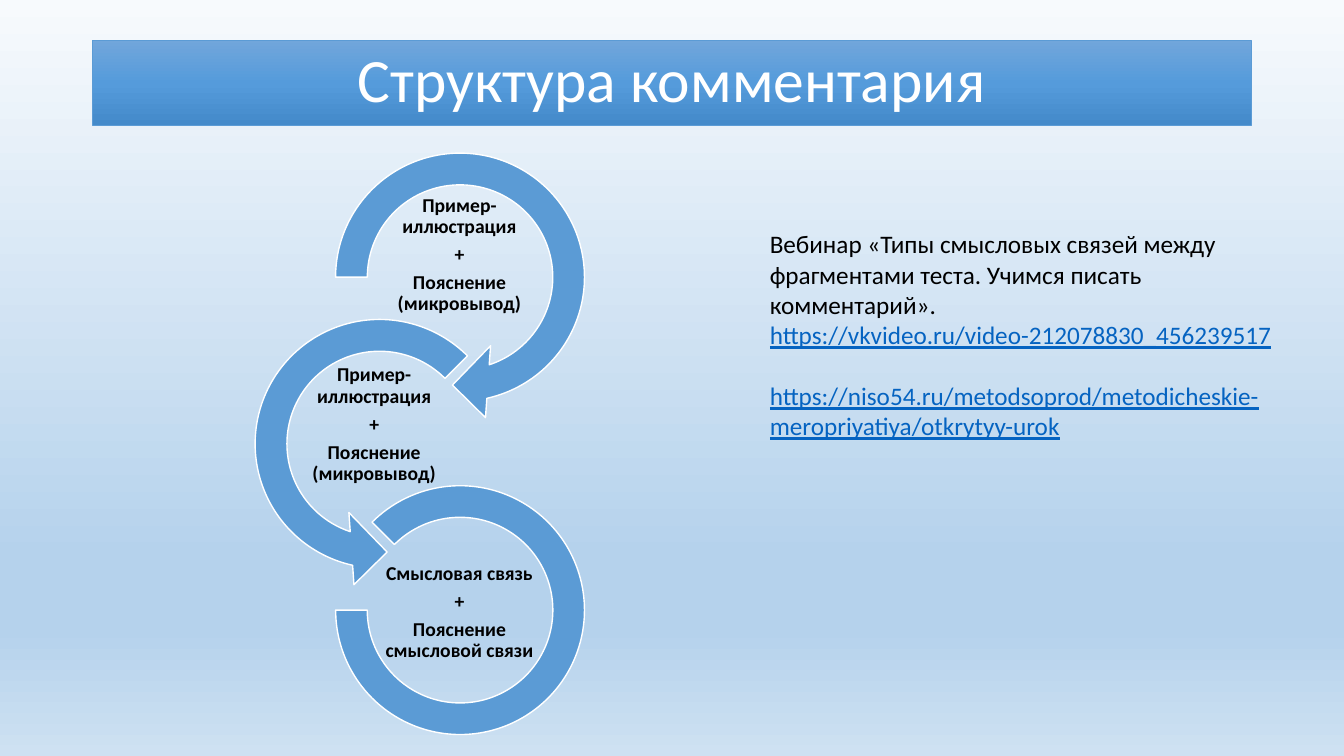
import pptx
import pptx.dml.color
import pptx.enum.shapes
import pptx.enum.text
import pptx.oxml
import pptx.oxml.ns
import pptx.util

Cm = pptx.util.Cm
Pt = pptx.util.Pt
SHAPES = pptx.enum.shapes.MSO_SHAPE
ALIGN = pptx.enum.text.PP_ALIGN
ANCHOR = pptx.enum.text.MSO_ANCHOR

COLOURS = {
    "blue": "5B9BD5",
    "white": "FFFFFF",
    "black": "000000",
    "link": "0563C1",
}
BACKGROUND_STOPS = [(0, "F7FAFD"), (74, "B5D2EC"), (83, "B5D2EC"), (100, "CEE1F2")]
TITLE_STOPS = [(0, "71A6DB"), (50, "559BDB"), (100, "448ACA")]

EXAMPLE = ["Пример-иллюстрация", "+", "Пояснение (микровывод)"]
CONNECTION = ["Смысловая связь", "+", "Пояснение смысловой связи"]
RINGS = [
    (SHAPES.CIRCULAR_ARROW, (7.95, 3.35, 7.29, 7.27), (0.11, 11.423, 45, 108, 0.125),
     (9.55, 5.41, 4.06, 2.03), EXAMPLE),
    (SHAPES.LEFT_CIRCULAR_ARROW, (5.92, 7.54, 7.29, 7.29), (0.11, 11.423, 63, 189, 0.125),
     (7.26, 9.04, 4.34, 3.33), EXAMPLE),
    (SHAPES.BLOCK_ARC, (8.46, 12.24, 6.27, 6.27), (135, 108, 0.127),
     (9.55, 14.43, 4.06, 2.03), CONNECTION),
]
WEBINAR = "Вебинар «Типы смысловых связей между фрагментами теста. Учимся писать комментарий»."
VIDEO_ADDRESS = "https://vkvideo.ru/video-212078830_456239517"
LESSON_ADDRESS = "https://niso54.ru/metodsoprod/metodicheskie-meropriyatiya/otkrytyy-urok"


def colour(name):
    return pptx.dml.color.RGBColor.from_string(COLOURS[name])


def apply(target, values):
    for name, value in values.items():
        setattr(target, name, value)


class SlideBuilder:
    font_name = "Calibri"
    ring_paragraph = {"alignment": ALIGN.CENTER, "line_spacing": 0.9, "space_after": Pt(4.9)}
    ring_font = {"size": Pt(14), "bold": True}
    ring_frame = {"vertical_anchor": ANCHOR.MIDDLE, "margin_left": Cm(0.02),
                  "margin_right": Cm(0.02), "margin_top": Cm(0.02), "margin_bottom": Cm(0.02)}

    def __init__(self, slide):
        self.slide = slide

    def gradient(self, fill, element, stops):
        fill.gradient()
        fill.gradient_angle = 270
        stop_list = element.xpath(".//a:gsLst")[0]
        for stop in list(stop_list):
            stop_list.remove(stop)
        for position, value in stops:
            stop_list.append(pptx.oxml.parse_xml(
                f'<a:gs {pptx.oxml.ns.nsdecls("a")} pos="{position * 1000}">'
                f'<a:srgbClr val="{value}"/></a:gs>'))

    def background(self, stops):
        self.gradient(self.slide.background.fill, self.slide.element, stops)

    def shape(self, kind, box, line_name, line_width):
        shape = self.slide.shapes.add_shape(kind, *map(Cm, box))
        shape.shadow.inherit = False
        shape.line.color.rgb = colour(line_name)
        shape.line.width = Pt(line_width)
        return shape

    def fill_paragraph(self, paragraph, text, colour_name, font, layout):
        apply(paragraph, layout)
        run = paragraph.add_run()
        run.text = text
        apply(run.font, {"name": self.font_name, **font})
        run.font.color.rgb = colour(colour_name)

    def title(self, text, box, stops):
        shape = self.shape(SHAPES.RECTANGLE, box, "blue", 0.5)
        self.gradient(shape.fill, shape.element, stops)
        shape.text_frame.vertical_anchor = ANCHOR.MIDDLE
        self.fill_paragraph(shape.text_frame.paragraphs[0], text, "white", {"size": Pt(44)},
                            {"alignment": ALIGN.CENTER, "line_spacing": 0.9})

    def ring(self, kind, box, adjustments):
        shape = self.shape(kind, box, "white", 1)
        shape.fill.solid()
        shape.fill.fore_color.rgb = colour("blue")
        for index, value in enumerate(adjustments):
            shape.adjustments[index] = value

    def text(self, box, entries, frame_values):
        frame = self.slide.shapes.add_textbox(*map(Cm, box)).text_frame
        apply(frame, {"word_wrap": True, **frame_values})
        for index, entry in enumerate(entries):
            paragraph = frame.add_paragraph() if index else frame.paragraphs[0]
            self.fill_paragraph(paragraph, *entry)

    def ring_label(self, box, lines):
        entries = [(line, "black", self.ring_font, self.ring_paragraph) for line in lines]
        self.text(box, entries, self.ring_frame)


def main():
    presentation = pptx.Presentation()
    presentation.slide_width = Cm(33.87)
    presentation.slide_height = Cm(19.05)
    builder = SlideBuilder(presentation.slides.add_slide(presentation.slide_layouts[6]))

    builder.background(BACKGROUND_STOPS)
    builder.title("Структура комментария", (2.33, 1.02, 29.21, 2.13), TITLE_STOPS)
    for kind, ring_box, adjustments, label_box, lines in RINGS:
        builder.ring(kind, ring_box, adjustments)
        builder.ring_label(label_box, lines)

    plain = {"size": Pt(18)}
    underlined = {**plain, "underline": True}
    builder.text((19.15, 5.64, 13.34, 6.4), [
        (WEBINAR, "black", plain, {}),
        (VIDEO_ADDRESS, "link", underlined, {}),
        (LESSON_ADDRESS, "link", underlined, {"space_before": Pt(22)}),
    ], {})

    presentation.save("out.pptx")


if __name__ == "__main__":
    main()
